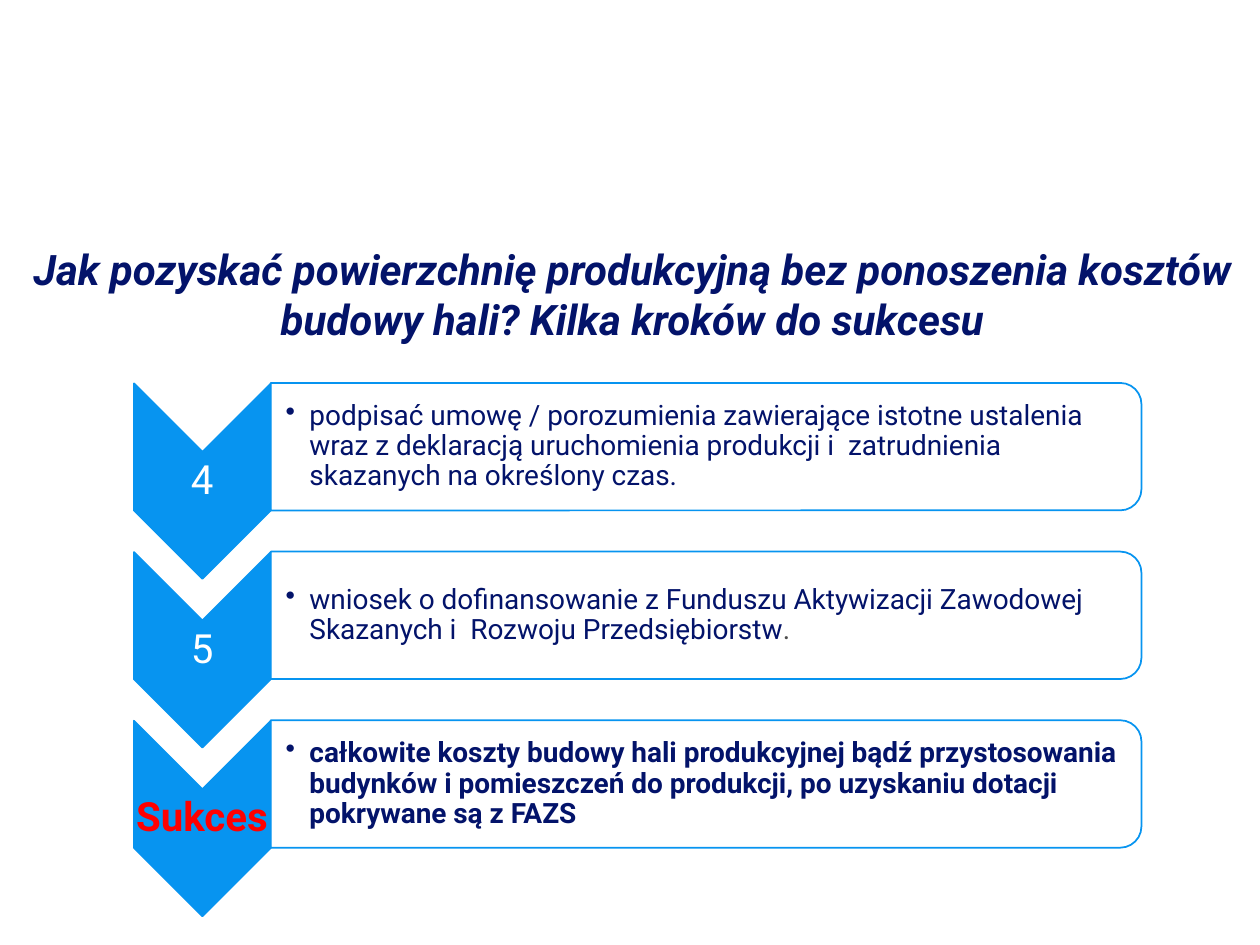
from lxml.etree import SubElement
from pptx import Presentation
from pptx.dml.color import RGBColor
from pptx.enum.shapes import MSO_SHAPE
from pptx.enum.text import MSO_ANCHOR, PP_ALIGN
from pptx.oxml.ns import qn
from pptx.util import Cm, Pt

COLORS = {"navy": "03136A", "blue": "0794F0", "white": "FFFFFF",
          "red": "FF0000", "grey": "4D4D4D"}
FONT = "Roboto"
ROW_PITCH = 3.4


def add_text(page, left, top, width, height, spans, size, margins):
    """Add a middle-anchored one-paragraph box; spans are (text, color, bold)."""
    box = page.shapes.add_textbox(Cm(left), Cm(top), Cm(width), Cm(height))
    frame = box.text_frame
    frame.word_wrap = True
    frame.vertical_anchor = MSO_ANCHOR.MIDDLE
    frame.margin_left = Cm(margins[0])
    frame.margin_right = Cm(margins[1])
    frame.margin_top = frame.margin_bottom = Cm(margins[2])
    para = frame.paragraphs[0]
    for text, color, bold in spans:
        span = para.add_run()
        span.text = text
        span.font.name = FONT
        span.font.size = Pt(size)
        span.font.bold = bold
        span.font.color.rgb = RGBColor.from_string(COLORS[color])
    return para


def add_turned_shape(page, kind, left, top, width, height, fill):
    """Add a preset shape turned a quarter clockwise with a blue outline."""
    shape = page.shapes.add_shape(kind, Cm(left), Cm(top), Cm(width), Cm(height))
    shape.rotation = 90
    shape.shadow.inherit = False
    shape.fill.solid()
    shape.fill.fore_color.rgb = RGBColor.from_string(COLORS[fill])
    shape.line.color.rgb = RGBColor.from_string(COLORS["blue"])
    shape.line.width = Pt(1)
    return shape


deck = Presentation()
deck.slide_width, deck.slide_height = Cm(25.4), Cm(19.05)
page = deck.slides.add_slide(deck.slide_layouts[6])

# Title
title = add_text(page, 0.05, 4.93, 25.4, 1.98, [
    ("Jak pozyskać powierzchnię produkcyjną bez ponoszenia kosztów "
     "budowy hali? Kilka kroków do sukcesu", "navy", True)], 24, (0.25, 0.25, 0.13))
title.alignment = PP_ALIGN.CENTER
title.runs[0].font.italic = True

# Steps: label span, then description spans
steps = [
    (("4", "white", False),
     [("podpisać umowę / porozumienia zawierające istotne ustalenia "
       "wraz z deklaracją uruchomienia produkcji i  zatrudnienia "
       "skazanych na określony czas.", "navy", False)]),
    (("5", "white", False),
     [("wniosek o dofinansowanie z Funduszu Aktywizacji Zawodowej "
       "Skazanych i  Rozwoju Przedsiębiorstw", "navy", False),
      (".", "grey", False)]),
    (("Sukces", "red", True),
     [("całkowite koszty budowy hali produkcyjnej bądź przystosowania "
       "budynków i pomieszczeń do produkcji, po uzyskaniu dotacji "
       "pokrywane są z FAZS", "navy", True)]),
]

for row, (label, description) in enumerate(steps):
    offset = row * ROW_PITCH

    # Chevron with its label
    add_turned_shape(page, MSO_SHAPE.CHEVRON, 2.11, 8.32 + offset, 3.94, 2.76, "blue")
    para = add_text(page, 2.69, 9.11 + offset, 2.77, 1.19, [label], 23,
                    (0.04, 0.04, 0.04))
    para.alignment = PP_ALIGN.CENTER
    para.line_spacing = 0.9

    # Panel rounded on its right side, slightly transparent
    panel = add_turned_shape(page, MSO_SHAPE.ROUND_2_SAME_RECTANGLE,
                             12.95, 0.23 + offset, 2.57, 17.55, "white")
    color = panel.fill._xPr.find(qn("a:solidFill")).find(qn("a:srgbClr"))
    SubElement(color, qn("a:alpha")).set("val", "90000")

    # Bulleted description
    para = add_text(page, 5.46, 7.85 + offset, 17.42, 2.31, description, 16,
                    (0.3, 0.03, 0.03))
    para.line_spacing = 0.9
    properties = para._p.get_or_add_pPr()
    properties.set("marL", str(Cm(0.48)))
    properties.set("indent", str(Cm(-0.48)))
    SubElement(properties, qn("a:buChar")).set("char", "•")

deck.save("out.pptx")
